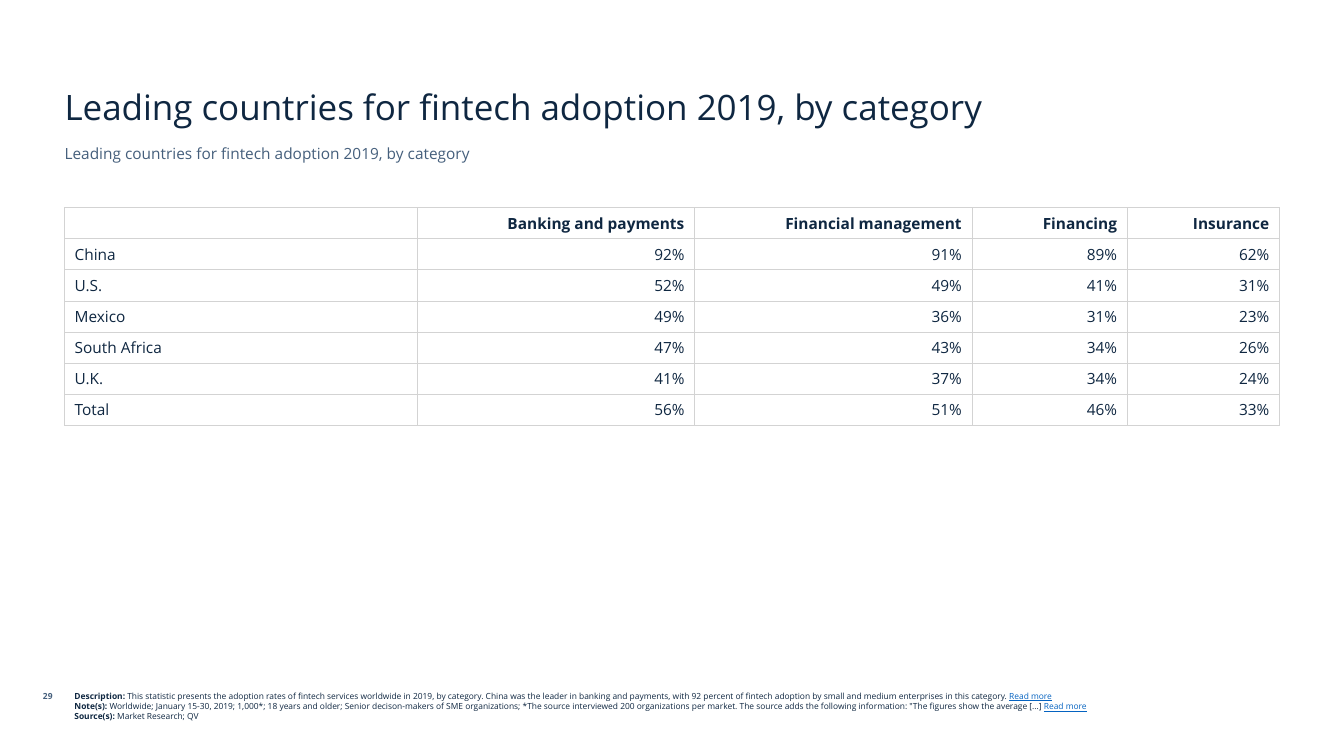
from dataclasses import dataclass

from lxml.etree import SubElement
from pptx import Presentation
from pptx.dml.color import RGBColor
from pptx.enum.text import MSO_ANCHOR, MSO_AUTO_SIZE, PP_ALIGN
from pptx.oxml.ns import qn
from pptx.util import Emu, Inches, Pt


@dataclass(frozen=True)
class Theme:
    font: str = "Open Sans"
    ink: str = "0F2741"
    muted: str = "455F7C"
    link: str = "0563C1"
    border: str = "D3D3D3"
    title_size: int = 25
    text_size: int = 11
    note_size: int = 6
    border_width: float = 0.75


@dataclass(frozen=True)
class Area:
    col: float
    row: float
    cols: float
    rows: float


@dataclass(frozen=True)
class Note:
    label: str
    text: str
    more: str = ""


THEME = Theme()
GRID = Inches(0.1)
TITLE = "Leading countries for fintech adoption 2019, by category"
TITLE_AREA = Area(5.4, 4.6, 122.4, 8.6)
SUBTITLE_AREA = Area(5.4, 13.8, 122.4, 3.4)
TABLE_AREA = Area(6.4, 20.6, 120.5, 21.6)
NOTES_AREA = Area(6.4, 68.1, 104.7, 5.8)
NUMBER_AREA = Area(0, 68.1, 6.2, 3)
TABLE_COLS = (35, 27.5, 27.5, 15.4, 15.1)
HEADERS = ("", "Banking and payments", "Financial management", "Financing", "Insurance")
ADOPTION = {
    "China": (92, 91, 89, 62),
    "U.S.": (52, 49, 41, 31),
    "Mexico": (49, 36, 31, 23),
    "South Africa": (47, 43, 34, 26),
    "U.K.": (41, 37, 34, 24),
    "Total": (56, 51, 46, 33),
}
NOTES = (
    Note("Description: ",
         "This statistic presents the adoption rates of fintech services worldwide in 2019, "
         "by category. China was the leader in banking and payments, with 92 percent of "
         "fintech adoption by small and medium enterprises in this category. ",
         "Read more"),
    Note("Note(s): ",
         "Worldwide; January 15-30, 2019; 1,000*; 18 years and older; Senior decison-makers "
         "of SME organizations; *The source interviewed 200 organizations per market. The "
         'source adds the following information: "The figures show the average [...] ',
         "Read more"),
    Note("Source(s): ", "Market Research; QV"),
)


def grid(units: float) -> Emu:
    return Emu(round(units * GRID))


def box(area: Area) -> tuple:
    return grid(area.col), grid(area.row), grid(area.cols), grid(area.rows)


def add_text(p, text: str, *, size: float = THEME.text_size, color: str = THEME.ink,
             bold: bool = False, underline: bool = False, align=PP_ALIGN.LEFT) -> None:
    p.alignment = align
    p.space_before = Pt(0)
    r = p.add_run()
    r.text = text
    r.font.name = THEME.font
    r.font.size = Pt(size)
    r.font.bold = bold
    r.font.underline = underline
    r.font.color.rgb = RGBColor.from_string(color)


def prepare_frame(sp, anchor=MSO_ANCHOR.TOP):
    tf = sp.text_frame
    tf.word_wrap = True
    tf.auto_size = MSO_AUTO_SIZE.NONE
    tf.vertical_anchor = anchor
    return tf


def fill_placeholder(sp, area: Area, text: str, anchor=MSO_ANCHOR.TOP, **fmt) -> None:
    sp.left, sp.top, sp.width, sp.height = box(area)
    add_text(prepare_frame(sp, anchor).paragraphs[0], text, **fmt)


def add_borders(cell) -> None:
    tc_pr = cell._tc.get_or_add_tcPr()
    for side in ("a:lnL", "a:lnR", "a:lnT", "a:lnB"):
        ln = SubElement(tc_pr, qn(side), w=str(Pt(THEME.border_width)))
        SubElement(SubElement(ln, qn("a:solidFill")), qn("a:srgbClr"), val=THEME.border)


def fill_cell(cell, text: str, **fmt) -> None:
    add_borders(cell)
    cell.fill.background()
    p = cell.text_frame.paragraphs[0]
    if text:
        add_text(p, text, **fmt)
    else:
        SubElement(p._p, qn("a:endParaRPr"), sz=str(THEME.text_size * 100))


def add_adoption_table(s) -> None:
    rows = [HEADERS] + [(name, *(f"{v}%" for v in values)) for name, values in ADOPTION.items()]
    table = s.shapes.add_table(len(rows), len(HEADERS), *box(TABLE_AREA)).table
    table.first_row = False
    table.horz_banding = False
    for column, width in zip(table.columns, TABLE_COLS):
        column.width = grid(width)
    for i, row in enumerate(rows):
        table.rows[i].height = grid(TABLE_AREA.rows / len(rows))
        for j, text in enumerate(row):
            fill_cell(table.cell(i, j), text, bold=i == 0,
                      align=PP_ALIGN.RIGHT if j else PP_ALIGN.LEFT)


def add_notes(s) -> None:
    tf = prepare_frame(s.shapes.add_textbox(*box(NOTES_AREA)))
    for i, note in enumerate(NOTES):
        p = tf.add_paragraph() if i else tf.paragraphs[0]
        add_text(p, note.label, size=THEME.note_size, bold=True)
        add_text(p, note.text, size=THEME.note_size)
        if note.more:
            add_text(p, note.more, size=THEME.note_size, color=THEME.link, underline=True)


def add_page_number(s, number: int) -> None:
    tf = prepare_frame(s.shapes.add_textbox(*box(NUMBER_AREA)))
    add_text(tf.paragraphs[0], str(number), size=THEME.note_size, color=THEME.muted,
             bold=True, align=PP_ALIGN.RIGHT)


def main() -> None:
    prs = Presentation()
    prs.slide_width, prs.slide_height = Inches(13.33), Inches(7.5)
    s = prs.slides.add_slide(prs.slide_layouts[0])
    fill_placeholder(s.shapes.title, TITLE_AREA, TITLE, MSO_ANCHOR.BOTTOM, size=THEME.title_size)
    fill_placeholder(s.placeholders[1], SUBTITLE_AREA, TITLE, color=THEME.muted)
    add_adoption_table(s)
    add_notes(s)
    add_page_number(s, 29)
    prs.save("out.pptx")


if __name__ == "__main__":
    main()
